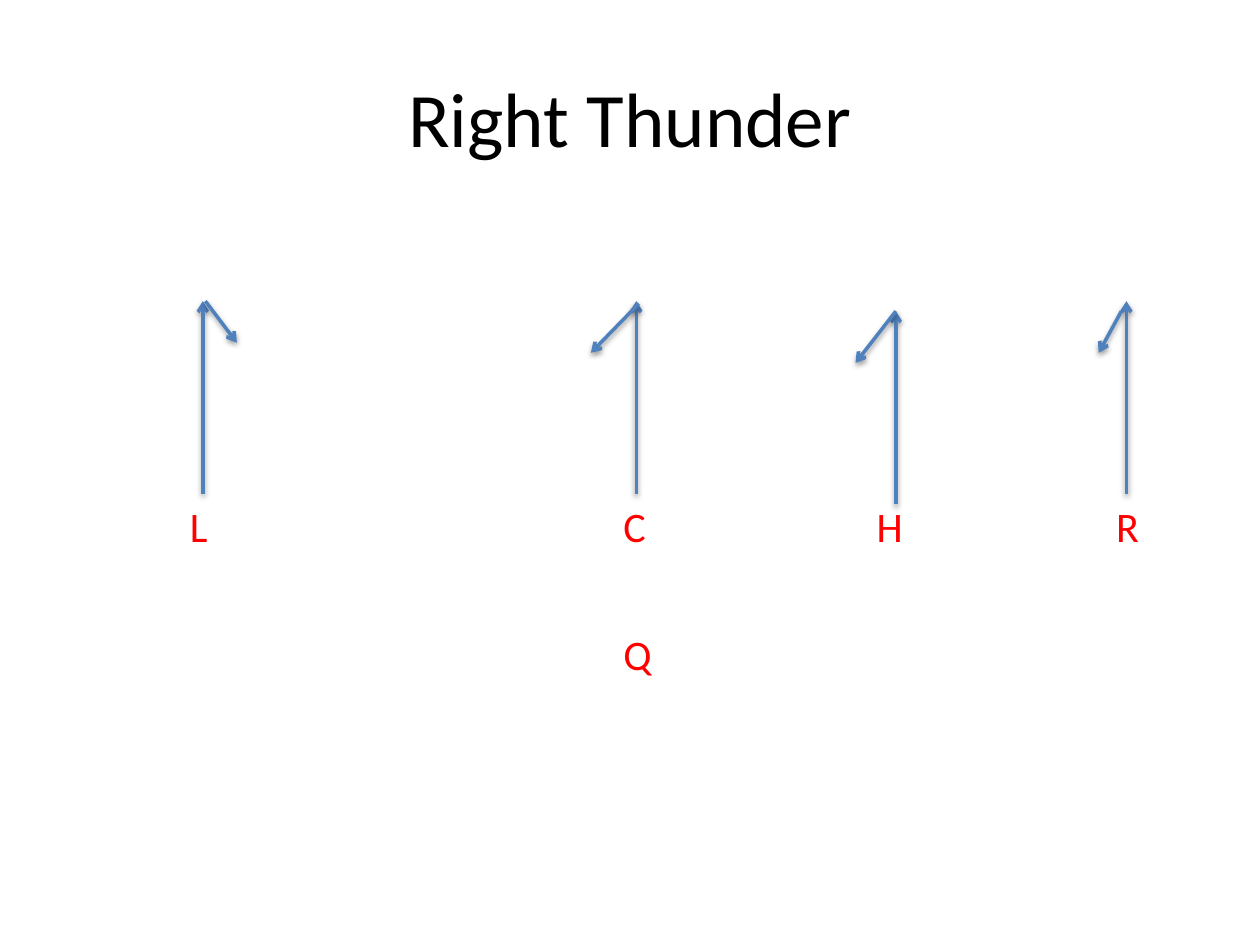
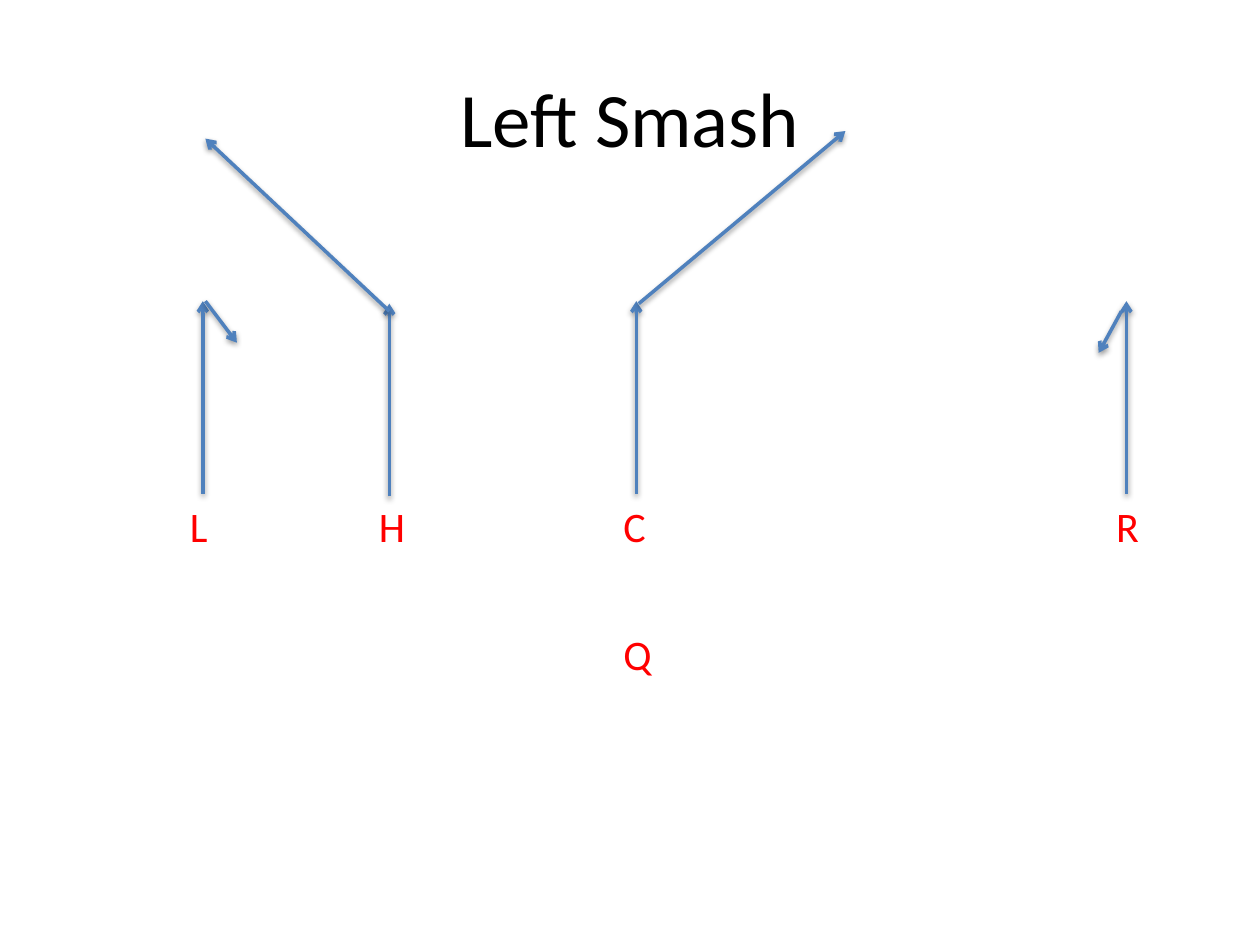
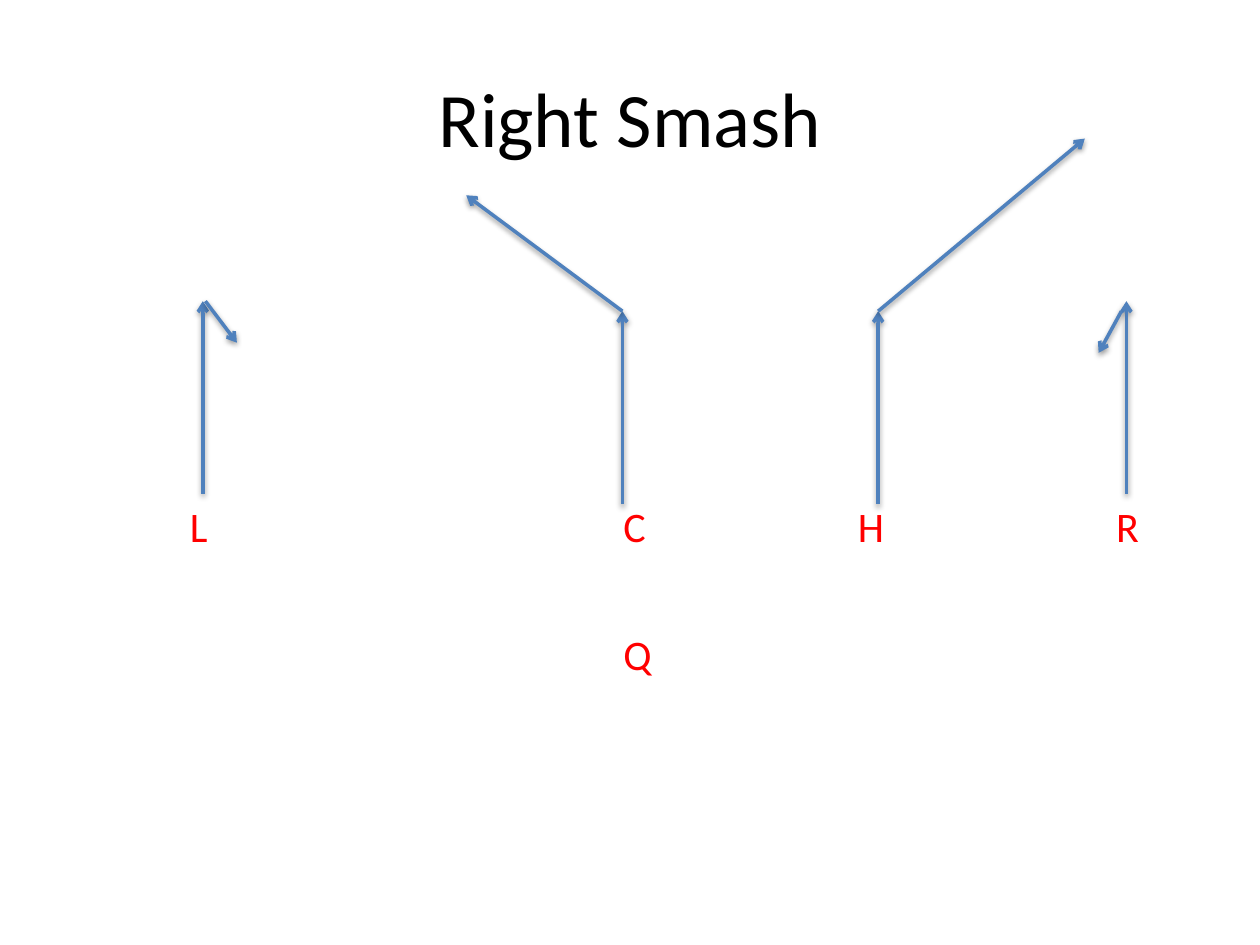
from pptx import Presentation
from pptx.dml.color import RGBColor
from pptx.enum.shapes import MSO_CONNECTOR as LINE
from pptx.enum.text import MSO_ANCHOR as ANCHOR, MSO_AUTO_SIZE as FIT, PP_ALIGN as ALIGN
from pptx.oxml.ns import qn
from pptx.util import Pt
from lxml.etree import SubElement

PX = 9144  # 100 px to the inch
BLACK, RED, BLUE = "000000", "FF0000", "4F81BD"
FONT = "Calibri"
STEM = 153  # length of the straight part of each route
ROW = 392  # top of the labels on the line of scrimmage

# Labels and routes that every play shares
SPOTS = [("L", 141, ROW), ("Q", 485, 494), ("R", 876, ROW), ("C", 485, ROW)]
WIDE = [
    (161, 392, (163, 239), (188, 272)),
    (894, 392, (890, 247), (872, 280)),
]

# Title, left of H, then routes: stem x, stem foot, start and end of the break
PLAYS = [
    ("Right Thunder", 686, [
        (505, 392, (507, 241), (469, 280)),
        (711, 400, (711, 247), (679, 288)),
    ]),
    ("Left Smash", 291, [
        (505, 392, (507, 241), (671, 104)),
        (309, 394, (309, 247), (163, 110)),
    ]),
    ("Right Smash", 671, [
        (697, 400, (697, 247), (861, 110)),
        (494, 400, (494, 247), (370, 155)),
    ]),
]


def write(frame, text, size, color):
    run = frame.paragraphs[0].add_run()
    run.text = text
    run.font.name = FONT
    run.font.size = Pt(size)
    run.font.color.rgb = RGBColor.from_string(color)


def arrow(slide, start, end):
    """Draw a route arrow; its soft shadow comes from the theme."""
    line = slide.shapes.add_connector(LINE.STRAIGHT, *(n * PX for n in start + end)).line
    line.color.rgb = RGBColor.from_string(BLUE)
    line.width = Pt(2)
    SubElement(line._get_or_add_ln(), qn("a:tailEnd"), type="arrow")


deck = Presentation()
deck.slide_width, deck.slide_height = 1000 * PX, 750 * PX

for name, left, routes in PLAYS:
    slide = deck.slides.add_slide(deck.slide_layouts[5])
    title = slide.shapes.title
    title.left, title.top, title.width, title.height = (n * PX for n in (50, 30, 900, 125))
    title.text_frame.vertical_anchor = ANCHOR.MIDDLE
    write(title.text_frame, name, 44, BLACK)
    title.text_frame.paragraphs[0].alignment = ALIGN.CENTER

    for mark, x, y in SPOTS + [("H", left, ROW)]:
        box = slide.shapes.add_textbox(x * PX, y * PX, 47 * PX, 50 * PX)
        box.text_frame.word_wrap = True
        box.text_frame.auto_size = FIT.SHAPE_TO_FIT_TEXT
        write(box.text_frame, mark, 24, RED)

    for x, foot, start, end in WIDE + routes:
        arrow(slide, (x, foot), (x, foot - STEM))
        arrow(slide, start, end)

deck.save("out.pptx")
